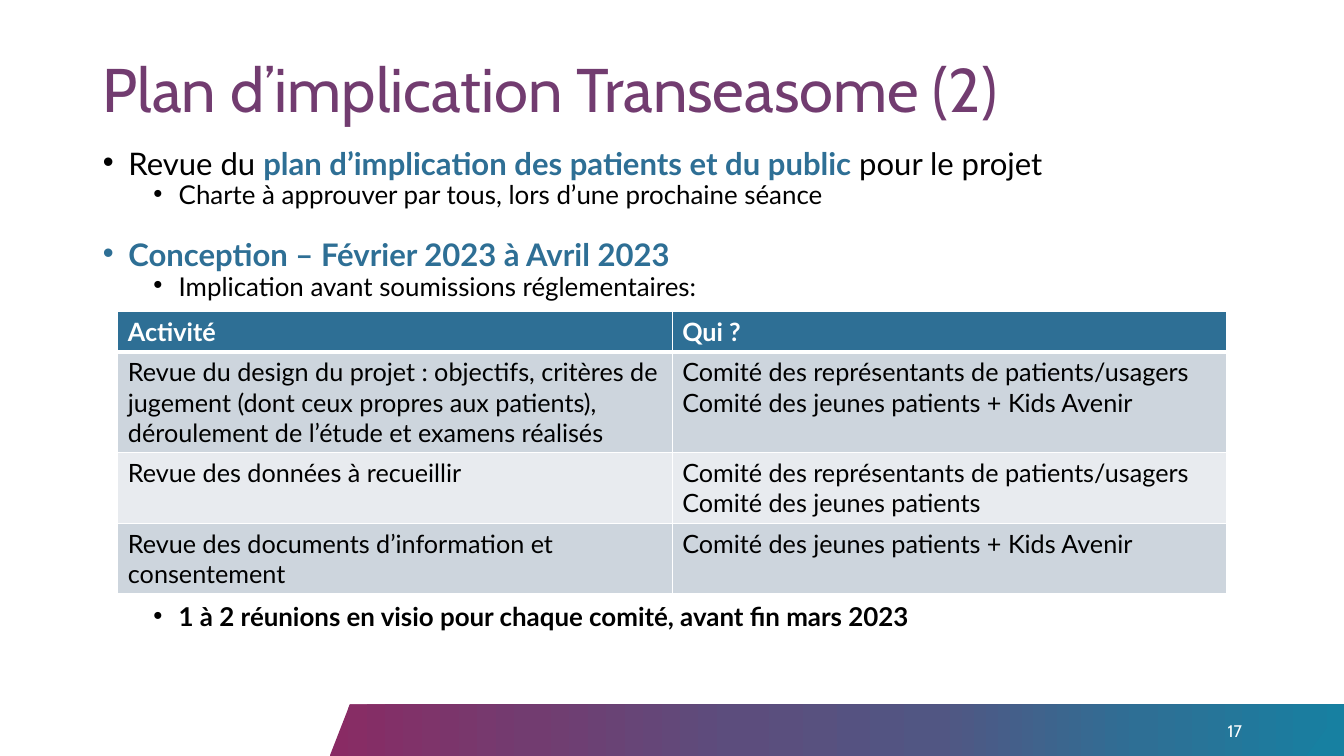
from lxml import etree
from pptx import Presentation
from pptx.dml.color import RGBColor
from pptx.enum.shapes import MSO_SHAPE
from pptx.enum.text import MSO_ANCHOR, MSO_AUTO_SIZE, PP_ALIGN
from pptx.oxml.ns import qn
from pptx.util import Cm, Pt

PARALLELOGRAM, RIGHT_TRIANGLE = MSO_SHAPE.PARALLELOGRAM, MSO_SHAPE.RIGHT_TRIANGLE
LEFT, RIGHT, JUSTIFY = PP_ALIGN.LEFT, PP_ALIGN.RIGHT, PP_ALIGN.JUSTIFY
TOP, MIDDLE = MSO_ANCHOR.TOP, MSO_ANCHOR.MIDDLE
NO_AUTOFIT = MSO_AUTO_SIZE.NONE

COLORS = {
    "plum": "723C70", "blue": "2E6F95", "teal": "1780A1",
    "black": "000000", "white": "FFFFFF",
    "row_dark": "CDD5DD", "row_light": "E8EBEF",
}
BAND_STOPS = {0: "892B64", 20: "723C70", 40: "5C4D7D",
              60: "515683", 80: "2E6F95", 100: "1780A1"}

# Text formats: font attributes
TITLE = {"name": "Cabin", "size": Pt(44), "bold": False, "color": "plum"}
NUMBER = {"name": "Cabin", "size": Pt(12), "bold": False, "color": "white"}
MAIN = {"name": "Lato", "size": Pt(22.2), "bold": False, "color": "black"}
MAIN_BLUE = {**MAIN, "bold": True, "color": "blue"}
SUB = {**MAIN, "size": Pt(18.5)}
SUB_BOLD = {**SUB, "bold": True}
CELL = {**MAIN, "size": Pt(18)}
HEADER = {**CELL, "bold": True, "color": "white"}


def rgb(color):
    return RGBColor.from_string(COLORS[color])


def box(*lengths):
    return [Cm(length) for length in lengths]


class SlideBuilder:
    """Holds the current slide and the way its elements are styled."""

    def __init__(self, slide):
        self.slide = slide
        self.shapes = slide.shapes

    def add_runs(self, paragraph, runs, **layout):
        for attribute, value in layout.items():
            setattr(paragraph, attribute, value)
        for words, style in runs:
            run = paragraph.add_run()
            run.text = words
            for attribute, value in style.items():
                if attribute == "color":
                    run.font.color.rgb = rgb(value)
                else:
                    setattr(run.font, attribute, value)

    def frame(self, holder, anchor):
        frame = holder.text_frame
        settings = {"word_wrap": True, "auto_size": NO_AUTOFIT, "vertical_anchor": anchor}
        for attribute, value in settings.items():
            setattr(frame, attribute, value)
        return frame

    def place(self, holder, position):
        holder.left, holder.top, holder.width, holder.height = box(*position)

    def title(self, words, position):
        title = self.shapes.title
        self.place(title, position)
        self.add_runs(self.frame(title, MIDDLE).paragraphs[0], [(words, TITLE)],
                      alignment=LEFT, line_spacing=0.9)

    def bullets(self, items, position):
        body = self.slide.placeholders[1]
        self.place(body, position)
        frame = self.frame(body, TOP)
        for index, (level, spacing, before, runs) in enumerate(items):
            paragraph = frame.add_paragraph() if index else frame.paragraphs[0]
            self.add_runs(paragraph, runs, level=level, alignment=JUSTIFY,
                          line_spacing=spacing, space_before=Pt(before), space_after=Pt(0))
            properties = paragraph._p.get_or_add_pPr()
            properties.set("marL", str(Cm(0.64 + 1.27 * level)))
            properties.set("indent", str(-Cm(0.64)))
            etree.SubElement(properties, qn("a:buChar"), char="•")

    def text(self, words, style, position, alignment):
        label = self.shapes.add_textbox(*box(*position))
        self.add_runs(self.frame(label, MIDDLE).paragraphs[0], [(words, style)],
                      alignment=alignment)

    def shape(self, kind, position, color):
        shape = self.shapes.add_shape(kind, *box(*position))
        shape.shadow.inherit = False
        shape.line.fill.background()
        shape.fill.solid()
        shape.fill.fore_color.rgb = rgb(color)
        return shape

    def gradient(self, shape, stops):
        shape.fill.gradient()
        shape.fill.gradient_angle = 0
        stop_list = shape._element.spPr.find(".//" + qn("a:gsLst"))
        for default_stop in list(stop_list):
            stop_list.remove(default_stop)
        for percent, color in stops.items():
            stop = etree.SubElement(stop_list, qn("a:gs"), pos=str(percent * 1000))
            etree.SubElement(stop, qn("a:srgbClr"), val=color)

    def borders(self, cell, widths):
        properties = cell._tc.get_or_add_tcPr()
        for side, width in widths.items():
            line = etree.SubElement(properties, qn("a:ln" + side), w=str(Pt(width)))
            fill = etree.SubElement(line, qn("a:solidFill"))
            etree.SubElement(fill, qn("a:srgbClr"), val=COLORS["white"])

    def table(self, rows, position, heights):
        table = self.shapes.add_table(len(rows), len(rows[0]), *box(*position)).table
        for r, (row, height) in enumerate(zip(rows, heights)):
            table.rows[r].height = Cm(height)
            fill = "blue" if r == 0 else "row_dark" if r % 2 else "row_light"
            for c, lines in enumerate(row):
                cell = table.cell(r, c)
                self.borders(cell, {"L": 1, "R": 1, "T": 3 if r == 1 else 1,
                                    "B": 3 if r == 0 else 1})
                cell.fill.solid()
                cell.fill.fore_color.rgb = rgb(fill)
                for index, words in enumerate(lines):
                    frame = cell.text_frame
                    paragraph = frame.add_paragraph() if index else frame.paragraphs[0]
                    self.add_runs(paragraph, [(words, CELL if r else HEADER)])


def main():
    presentation = Presentation()
    presentation.slide_width, presentation.slide_height = box(33.87, 19.05)
    builder = SlideBuilder(presentation.slides.add_slide(presentation.slide_layouts[1]))

    # Footer band and slide number
    band = builder.shape(PARALLELOGRAM, (8.31, 17.75, 25.55, 1.3), "teal")
    band.adjustments[0] = 0.39
    builder.gradient(band, BAND_STOPS)
    corner = builder.shape(RIGHT_TRIANGLE, (32.92, 17.75, 0.95, 1.3), "teal")
    corner._element.spPr.find(qn("a:xfrm")).set("flipH", "1")
    builder.text("17", NUMBER, (23.93, 17.91, 7.62, 1.02), RIGHT)

    # Title and list; the last item sits below the table
    builder.title("Plan d’implication Transeasome (2)", (2.34, 1.02, 29.21, 2.62))
    builder.bullets([
        (0, 0.7, 10, [("Revue du ", MAIN),
                      ("plan d’implication des patients et du public ", MAIN_BLUE),
                      ("pour le projet", MAIN)]),
        (1, 0.7, 5, [("Charte à approuver par tous, lors d’une prochaine séance", SUB)]),
        (0, 0.7, 26, [("Conception – Février 2023 à Avril 2023", MAIN_BLUE)]),
        (1, 0.7, 5, [("Implication avant soumissions réglementaires:", SUB)]),
        (1, 0.8, 218.5, [("1 à 2 réunions en visio pour chaque comité, avant fin mars 2023",
                          SUB_BOLD)]),
    ], (2.34, 3.76, 29.21, 13.39))

    # Activities and who takes part
    users = "Comité des représentants de patients/usagers"
    young = "Comité des jeunes patients"
    young_and_kids = young + " + Kids Avenir"
    builder.table([
        [["Activité"], ["Qui ?"]],
        [["Revue du design du projet : objectifs, critères de jugement (dont ceux "
          "propres aux patients), déroulement de l’étude et examens réalisés"],
         [users, young_and_kids]],
        [["Revue des données à recueillir"], [users, young]],
        [["Revue des documents d’information et consentement"], [young_and_kids]],
    ], (2.97, 7.85, 27.94, 7.11), (1.01, 2.54, 1.78, 1.78))

    presentation.save("out.pptx")


if __name__ == "__main__":
    main()
